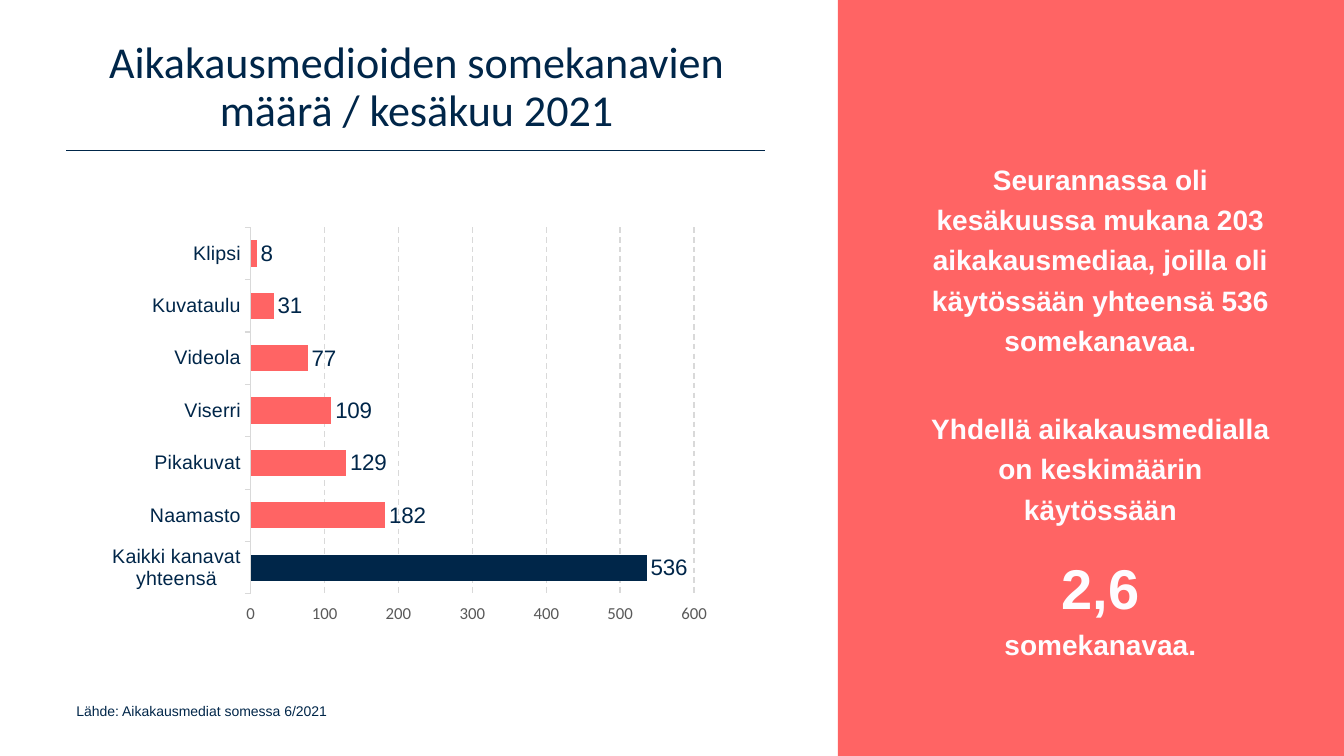
from lxml import etree
from pptx import Presentation
from pptx.chart.data import CategoryChartData
from pptx.dml.color import RGBColor
from pptx.enum.chart import XL_CHART_TYPE, XL_LABEL_POSITION, XL_TICK_MARK
from pptx.enum.dml import MSO_LINE
from pptx.enum.shapes import MSO_CONNECTOR, MSO_SHAPE
from pptx.enum.text import MSO_ANCHOR, PP_ALIGN
from pptx.oxml import parse_xml
from pptx.oxml.ns import nsdecls, qn
from pptx.util import Pt

BAR = XL_CHART_TYPE.BAR_CLUSTERED
OUTSIDE_END = XL_LABEL_POSITION.OUTSIDE_END
TICK_OUT = XL_TICK_MARK.OUTSIDE
DASH = MSO_LINE.DASH
STRAIGHT = MSO_CONNECTOR.STRAIGHT
RECTANGLE = MSO_SHAPE.RECTANGLE
MIDDLE, TOP = MSO_ANCHOR.MIDDLE, MSO_ANCHOR.TOP
CENTER, LEFT = PP_ALIGN.CENTER, PP_ALIGN.LEFT

NAVY = RGBColor(0x00, 0x26, 0x49)
CORAL = RGBColor(0xFF, 0x64, 0x64)
OFF_WHITE = RGBColor(0xFE, 0xFC, 0xFF)
LIGHT_GREY = RGBColor(0xD9, 0xD9, 0xD9)
DARK_GREY = RGBColor(0x59, 0x59, 0x59)

CHANNELS = [
    ("Kaikki kanavat yhteensä", 536),
    ("Naamasto", 182),
    ("Pikakuvat", 129),
    ("Viserri", 109),
    ("Videola", 77),
    ("Kuvataulu", 31),
    ("Klipsi", 8),
]
# Text, size, space before
FINDINGS = [
    ("Seurannassa oli kesäkuussa mukana 203 aikakausmediaa, joilla oli "
     "käytössään yhteensä 536 somekanavaa.", 20, 0),
    ("Yhdellä aikakausmedialla on keskimäärin käytössään", 20, 34),
    ("2,6", 40, 10),
    ("somekanavaa.", 20, 0),
]


def set_font(font, name, size, color, bold=False):
    font.name = name
    font.size = Pt(size)
    font.color.rgb = color
    font.bold = bold


def add_panel(slide, x, y, w, h, color):
    s = slide.shapes.add_shape(RECTANGLE, Pt(x), Pt(y), Pt(w), Pt(h))
    s.shadow.inherit = False
    s.fill.solid()
    s.fill.fore_color.rgb = color
    s.line.fill.background()


def add_rule(slide, x1, x2, y):
    s = slide.shapes.add_connector(STRAIGHT, Pt(x1), Pt(y), Pt(x2), Pt(y))
    s.line.color.rgb = NAVY
    s.line.width = Pt(1)
    etree.SubElement(s._element.spPr, qn("a:effectLst"))


def set_title(slide, text, x, y, w, h):
    s = slide.shapes.title
    s.left, s.top, s.width, s.height = Pt(x), Pt(y), Pt(w), Pt(h)
    tf = s.text_frame
    tf.text = text
    tf.vertical_anchor = MIDDLE
    p = tf.paragraphs[0]
    p.alignment = CENTER
    p.line_spacing = 0.9
    set_font(p.runs[0].font, "Calibri", 31.5, NAVY)


def add_text(slide, paragraphs, x, y, w, h, color, align=LEFT, anchor=TOP,
             spacing=1.0, bold=False):
    tf = slide.shapes.add_textbox(Pt(x), Pt(y), Pt(w), Pt(h)).text_frame
    tf.word_wrap = True
    tf.vertical_anchor = anchor
    for i, (text, size, before) in enumerate(paragraphs):
        p = tf.add_paragraph() if i else tf.paragraphs[0]
        p.text = text
        p.alignment = align
        p.line_spacing = spacing
        p.space_before = Pt(before)
        set_font(p.runs[0].font, "Arial", size, color, bold)


def set_plot_area(chart, x, y, w, h):
    plot_area = chart._chartSpace.chart.plotArea
    for old in plot_area.findall(qn("c:layout")):
        plot_area.remove(old)
    plot_area.insert(0, parse_xml(
        f'<c:layout {nsdecls("c")}><c:manualLayout>'
        '<c:layoutTarget val="inner"/>'
        '<c:xMode val="edge"/><c:yMode val="edge"/>'
        f'<c:x val="{x}"/><c:y val="{y}"/><c:w val="{w}"/><c:h val="{h}"/>'
        '</c:manualLayout></c:layout>'))


def add_bar_chart(slide, x, y, w, h):
    data = CategoryChartData(number_format="#,##0")
    data.categories = [name for name, _ in CHANNELS]
    data.add_series("Somekanavat", [count for _, count in CHANNELS])
    chart = slide.shapes.add_chart(BAR, Pt(x), Pt(y), Pt(w), Pt(h), data).chart
    chart.has_legend = False
    chart.has_title = False
    chart.font.name = "Calibri"
    chart.font.size = Pt(10)
    set_plot_area(chart, 0.25, 0.086, 0.567, 0.838)

    # Bars, with the total picked out
    plot = chart.plots[0]
    plot.gap_width = 100
    plot.vary_by_categories = False
    series = plot.series[0]
    total = series.points[0]
    for bar, color in ((series, CORAL), (total, NAVY)):
        bar.format.fill.solid()
        bar.format.fill.fore_color.rgb = color

    # Value labels
    plot.has_data_labels = True
    labels = plot.data_labels
    labels.show_value = True
    labels.position = OUTSIDE_END
    labels.number_format = "#,##0"
    labels.number_format_is_linked = False
    set_font(labels.font, "Arial", 16, NAVY)

    # Axes
    cat_axis, val_axis = chart.category_axis, chart.value_axis
    cat_axis.major_tick_mark = val_axis.major_tick_mark = TICK_OUT
    cat_axis.format.line.color.rgb = LIGHT_GREY
    cat_axis.format.line.width = Pt(0.75)
    set_font(cat_axis.tick_labels.font, "Arial", 14, NAVY)
    val_axis.minimum_scale = 0
    val_axis.maximum_scale = 600
    val_axis.major_unit = 100
    val_axis.format.line.fill.background()
    set_font(val_axis.tick_labels.font, "Calibri", 12, DARK_GREY)
    grid = val_axis.major_gridlines.format.line
    grid.color.rgb = LIGHT_GREY
    grid.width = Pt(1)
    grid.dash_style = DASH


def main():
    prs = Presentation()
    prs.slide_width, prs.slide_height = Pt(960), Pt(540)
    slide = prs.slides.add_slide(prs.slide_layouts[5])

    # Side panel and heading
    add_panel(slide, 598.5, 0, 361.5, 540, CORAL)
    add_rule(slide, 47.5, 546.5, 107.5)
    set_title(slide, "Aikakausmedioiden somekanavien määrä / kesäkuu 2021",
              47.5, 18, 500, 90)

    # Chart and source line
    add_bar_chart(slide, 39.5, 135.5, 558.5, 312.5)
    add_text(slide, [("Lähde: Aikakausmediat somessa 6/2021", 10, 0)],
             47.5, 498.5, 474, 31.5, NAVY)

    # Key findings
    add_text(slide, FINDINGS, 651, 108, 270, 367, OFF_WHITE,
             CENTER, MIDDLE, 1.2, True)

    prs.save("out.pptx")


if __name__ == "__main__":
    main()
